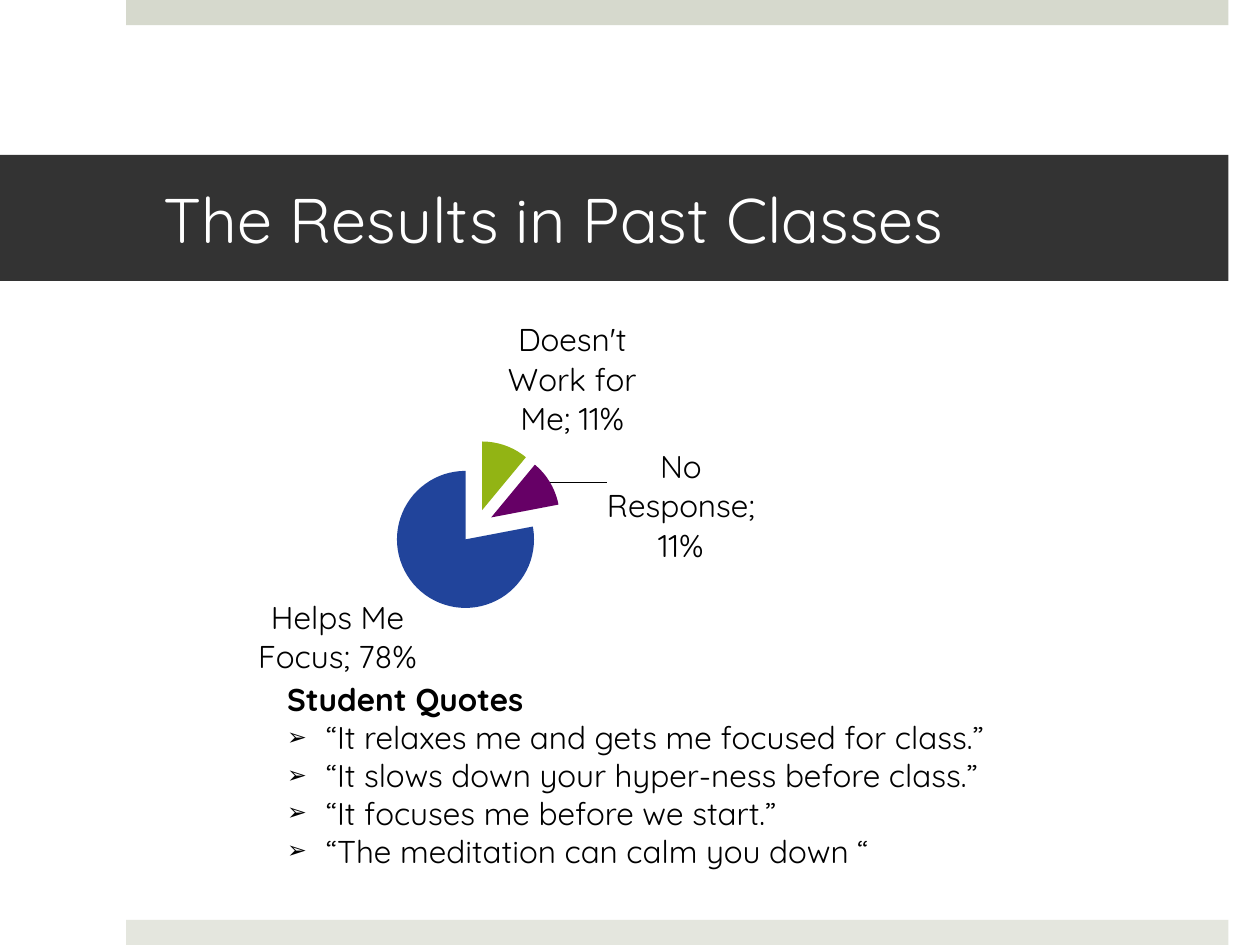
import pptx
import pptx.chart.data
import pptx.dml.color
import pptx.enum.chart
import pptx.enum.shapes
import pptx.enum.text
import pptx.oxml
import pptx.oxml.ns
import pptx.util
from dataclasses import dataclass
from lxml import etree

Inches = pptx.util.Inches
Pt = pptx.util.Pt
qn = pptx.oxml.ns.qn

WIDTH, HEIGHT = 10, 7.5
RESULTS = {"Doesn't Work for Me": 0.11, "No Response": 0.11, "Helps Me Focus": 0.78}
QUOTES = (
    "“It relaxes me and gets me focused for class.”",
    "“It slows down your hyper-ness before class.”",
    "“It focuses me before we start.”",
    "“The meditation can calm you down “",
)


@dataclass(frozen=True)
class Theme:
    font: str = "Quicksand"
    title_size: float = 36
    body_size: float = 18
    line_height: float = 21.6
    text: str = "000000"
    title_text: str = "FFFFFF"
    band: str = "333333"
    top_bar: str = "D6D9CD"
    bottom_bar: str = "E4E6DE"
    slices: tuple = ("92B414", "660066", "21449B")


THEME = Theme()


def rgb(value):
    return pptx.dml.color.RGBColor.from_string(value)


def style_font(font, size, color, bold=False):
    font.name = THEME.font
    font.size = Pt(size)
    font.bold = bold
    font.color.rgb = rgb(color)


def add_bar(page, left, top, width, height, color):
    bar = page.shapes.add_shape(
        pptx.enum.shapes.MSO_SHAPE.RECTANGLE,
        Inches(left), Inches(top), Inches(width), Inches(height))
    bar.shadow.inherit = False
    bar.fill.solid()
    bar.fill.fore_color.rgb = rgb(color)
    bar.line.fill.background()
    return bar


def add_title(page, text, right):
    band = add_bar(page, 0, 1.23, right, 1, THEME.band)
    frame = band.text_frame
    frame.word_wrap = True
    frame.margin_left, frame.margin_right = Inches(1.3), Inches(0.3)
    frame.vertical_anchor = pptx.enum.text.MSO_ANCHOR.MIDDLE
    para = frame.paragraphs[0]
    para.text = text
    para.alignment = pptx.enum.text.PP_ALIGN.LEFT
    style_font(para.font, THEME.title_size, THEME.title_text)


def chart_element(tag, **attributes):
    element = pptx.oxml.parse_xml(
        f'<c:{tag} xmlns:c="http://schemas.openxmlformats.org/drawingml/2006/chart"/>')
    for name, value in attributes.items():
        element.set(name, str(value))
    return element


def manual_layout(**settings):
    layout = chart_element("layout")
    manual = chart_element("manualLayout")
    layout.append(manual)
    for name, value in settings.items():
        manual.append(chart_element(name, val=value))
    return layout


def show_category_and_value(labels):
    """Switch on category name and value, joined with a semicolon."""
    for tag in ("c:showCatName", "c:showVal"):
        labels.find(qn(tag)).set("val", "1")
    separator = chart_element("separator")
    separator.text = "; "
    labels.find(qn("c:showBubbleSize")).addnext(separator)


def add_results_pie(page):
    data = pptx.chart.data.CategoryChartData(number_format="0%")
    data.categories = list(RESULTS)
    data.add_series("Series 1", list(RESULTS.values()))
    chart = page.shapes.add_chart(
        pptx.enum.chart.XL_CHART_TYPE.PIE,
        Inches(0.48), Inches(2.42), Inches(6.67), Inches(3.11), data).chart
    chart.has_legend = False
    chart.has_title = False
    style_font(chart.font, THEME.body_size, THEME.text)
    chart.plots[0].vary_by_categories = True

    series = chart.plots[0].series[0]
    for index, color in enumerate(THEME.slices):
        fill = series.points[index].format.fill
        fill.solid()
        fill.fore_color.rgb = rgb(color)
    for point in series._element.findall(qn("c:dPt")):
        point.find(qn("c:spPr")).addprevious(chart_element("explosion", val=25))

    outside = pptx.enum.chart.XL_LABEL_POSITION.OUTSIDE_END
    labels = series.data_labels
    labels.show_value = True
    labels.number_format = "0%"
    labels.number_format_is_linked = False
    labels.position = outside
    style_font(labels.font, THEME.body_size, THEME.text)
    show_category_and_value(labels._element)

    moved = series.points[1].data_label
    moved.position = outside
    style_font(moved.font, THEME.body_size, THEME.text)
    label = labels._element.find(qn("c:dLbl"))
    show_category_and_value(label)
    label.find(qn("c:idx")).addnext(manual_layout(x=0.06, y=0.22))
    label.find(qn("c:txPr")).addprevious(
        chart_element("numFmt", formatCode="0%", sourceLinked=0))

    plot_area = chart._chartSpace.chart.plotArea
    for old in plot_area.findall(qn("c:layout")):
        plot_area.remove(old)
    plot_area.insert(0, manual_layout(
        layoutTarget="inner", xMode="edge", yMode="edge",
        x=0.41, y=0.39, w=0.17, h=0.35))


def set_indent(para, left, first=0):
    properties = para._p.get_or_add_pPr()
    properties.set("marL", str(Inches(left)))
    properties.set("indent", str(Inches(first)))
    return properties


def add_bullet(para):
    properties = set_indent(para, 0.81, -0.31)
    color = etree.SubElement(properties, qn("a:buClr"))
    etree.SubElement(color, qn("a:srgbClr"), val=THEME.text)
    etree.SubElement(properties, qn("a:buSzPct"), val="75000")
    etree.SubElement(properties, qn("a:buFont"), typeface="Arial")
    etree.SubElement(properties, qn("a:buChar"), char="➢")


def add_quotes(page, heading, quotes):
    box = page.shapes.add_textbox(Inches(1.68), Inches(5.33), Inches(6.65), Inches(1.62))
    frame = box.text_frame
    frame.word_wrap = True
    frame.vertical_anchor = pptx.enum.text.MSO_ANCHOR.BOTTOM
    for index, text in enumerate((heading, *quotes)):
        para = frame.add_paragraph() if index else frame.paragraphs[0]
        para.text = text
        para.line_spacing = Pt(THEME.line_height)
        if index:
            add_bullet(para)
        else:
            set_indent(para, 0.5)
        style_font(para.font, THEME.body_size, THEME.text, bold=index == 0)


def main():
    deck = pptx.Presentation()
    deck.slide_width, deck.slide_height = Inches(WIDTH), Inches(HEIGHT)
    page = deck.slides.add_slide(deck.slide_layouts[6])
    left, right, thickness = WIDTH * 0.1, WIDTH * 0.975, 0.2
    add_bar(page, left, 0, right - left, thickness, THEME.top_bar)
    add_bar(page, left, HEIGHT - thickness, right - left, thickness, THEME.bottom_bar)
    add_results_pie(page)
    add_title(page, "The Results in Past Classes", right)
    add_quotes(page, "Student Quotes", QUOTES)
    deck.save("out.pptx")


if __name__ == "__main__":
    main()
